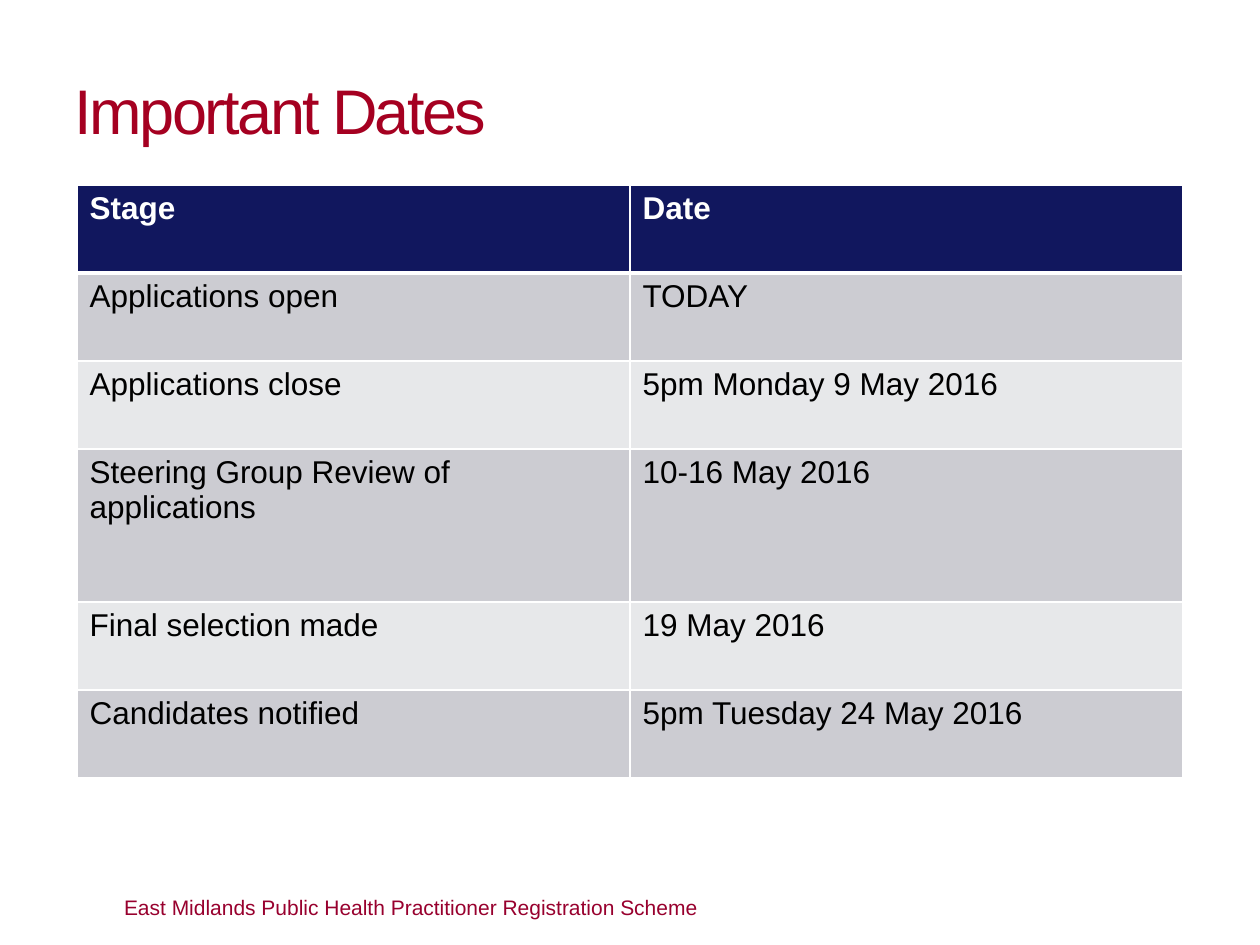
from lxml import etree
from pptx import Presentation
from pptx.dml.color import RGBColor
from pptx.enum.text import MSO_ANCHOR
from pptx.oxml.ns import qn
from pptx.util import Pt

TOP, MIDDLE = MSO_ANCHOR.TOP, MSO_ANCHOR.MIDDLE
EMU_PER_PIXEL = 914400 / 126
BLANK_LAYOUT = 6

HEADER = ("Stage", "Date")
DATES = [
    ("Applications open", "TODAY"),
    ("Applications close", "5pm Monday 9 May 2016"),
    ("Steering Group Review of applications", "10-16 May 2016"),
    ("Final selection made", "19 May 2016"),
    ("Candidates notified", "5pm Tuesday 24 May 2016"),
]


def px(length):
    return round(length * EMU_PER_PIXEL)


def color(value):
    return RGBColor.from_string(value)


def write(frame, text, *, size, fill, font="Arial", bold=False, spacing=0):
    run = frame.paragraphs[0].add_run()
    run.text = text
    run.font.name = font
    run.font.size = Pt(size)
    run.font.bold = bold
    run.font.color.rgb = color(fill)
    if spacing:
        run.font._element.set("spc", str(round(spacing * 100)))


def set_borders(cell, line_color, widths):
    """Add cell borders ahead of the fill, in the order the schema needs."""
    properties = cell._tc.get_or_add_tcPr()
    for index, (side, width) in enumerate(widths.items()):
        line = etree.Element(qn(f"a:{side}"), w=str(Pt(width)))
        solid = etree.SubElement(line, qn("a:solidFill"))
        etree.SubElement(solid, qn("a:srgbClr"), val=line_color)
        properties.insert(index, line)


class SlideBuilder:
    title_color = "A50021"
    footer_color = "98002E"
    header_fill = "11175E"
    band_fills = ("CCCCD2", "E7E8EA")
    border_color = "FFFFFF"

    def __init__(self, presentation):
        layout = presentation.slide_layouts[BLANK_LAYOUT]
        self.slide = presentation.slides.add_slide(layout)

    def text(self, text, left, top, width, height, *, anchor=TOP,
             inset_top=0, **style):
        box = self.slide.shapes.add_textbox(
            px(left), px(top), px(width), px(height))
        frame = box.text_frame
        frame.word_wrap = True
        frame.vertical_anchor = anchor
        frame.margin_left = frame.margin_right = frame.margin_bottom = 0
        frame.margin_top = px(inset_top)
        write(frame, text, **style)

    def table(self, rows, left, top, width, row_heights):
        columns = len(rows[0])
        table = self.slide.shapes.add_table(
            len(rows), columns, px(left), px(top),
            px(width), px(sum(row_heights))).table
        for column in table.columns:
            column.width = px(width / columns)
        for index, (values, height) in enumerate(zip(rows, row_heights)):
            table.rows[index].height = px(height)
            for column, value in enumerate(values):
                self.cell(table.cell(index, column), value, index)

    def cell(self, cell, value, row):
        is_header = row == 0
        fill = self.header_fill if is_header else self.band_fills[(row - 1) % 2]
        cell.fill.solid()
        cell.fill.fore_color.rgb = color(fill)
        # The rule between header and body is heavier than the others
        set_borders(cell, self.border_color, {
            "lnL": 1, "lnR": 1,
            "lnT": 3 if row == 1 else 1,
            "lnB": 3 if is_header else 1,
        })
        write(cell.text_frame, value, size=18, bold=is_header,
              fill="FFFFFF" if is_header else "000000")


def main():
    presentation = Presentation()
    presentation.slide_width = px(1260)
    presentation.slide_height = px(945)
    builder = SlideBuilder(presentation)

    # Title
    builder.text("Important Dates", 75, 66, 1106, 79, inset_top=6,
                 size=36, fill=builder.title_color, spacing=-1.5)

    # Table of dates, with a taller row for the wrapped stage
    builder.table([HEADER, *DATES], 77, 185, 1106,
                  [88, 88, 88, 153, 88, 88])

    # Footer
    builder.text("East Midlands Public Health Practitioner Registration Scheme",
                 124, 869, 1062, 76, anchor=MIDDLE,
                 size=12, fill=builder.footer_color)

    presentation.save("out.pptx")


if __name__ == "__main__":
    main()
